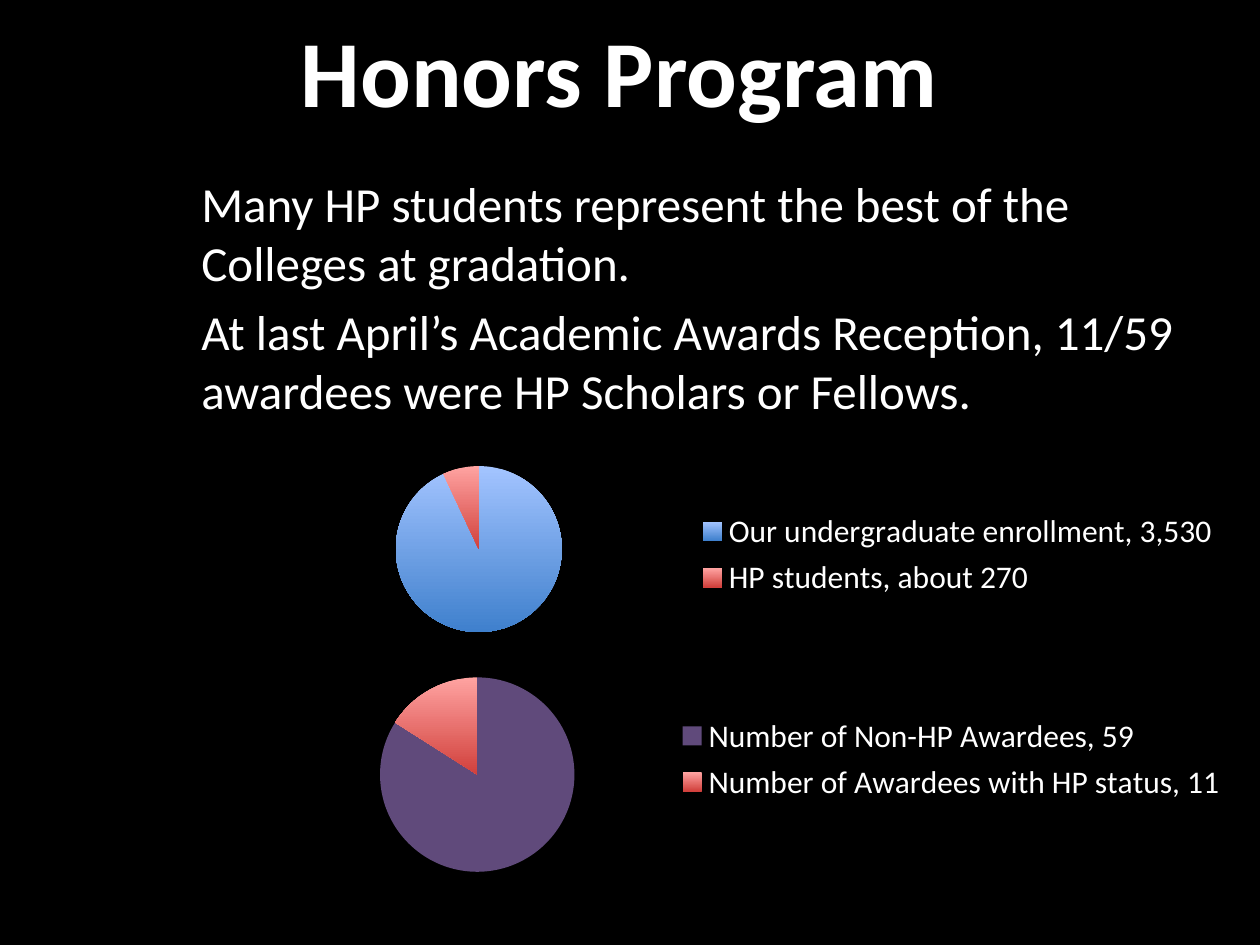
from lxml import etree
from pptx import Presentation
from pptx import util as u
from pptx.chart.data import CategoryChartData
from pptx.dml.color import RGBColor
from pptx.enum import chart as charts, text
from pptx.oxml import ns

COLORS = {
    "background": "000000",
    "text": "FFFFFF",
    "blue": ("A3C4FF", "3F80CD"),
    "red": ("FFA3A1", "D1403C"),
    "purple": "604A7B",
}
FONT = "Calibri"


def style_font(font, size, bold=False):
    font.name = FONT
    font.size = u.Pt(size)
    font.bold = bold
    font.color.rgb = RGBColor.from_string(COLORS["text"])


def set_layout(parent, index, mode, box):
    """Place a chart part by fractions of the chart: left, top, width, height."""
    for old_layout in parent.findall(ns.qn("c:layout")):
        parent.remove(old_layout)
    layout = etree.Element(ns.qn("c:layout"))
    manual = etree.SubElement(layout, ns.qn("c:manualLayout"))
    settings = [("xMode", "edge"), ("yMode", "edge"), *zip("xywh", box)]
    if mode:
        settings.insert(0, ("layoutTarget", mode))
    for tag, value in settings:
        etree.SubElement(manual, ns.qn("c:" + tag)).set("val", str(value))
    parent.insert(index, layout)


presentation = Presentation()
presentation.slide_width = u.Inches(10)
presentation.slide_height = u.Inches(7.5)
slide = presentation.slides.add_slide(presentation.slide_layouts[6])
slide.background.fill.solid()
slide.background.fill.fore_color.rgb = RGBColor.from_string(COLORS["background"])

# Pie charts: position, slices (label, percent, colour), plot and legend layout
pies = [
    ((0, 1.83, 10, 4.25),
     [("Our undergraduate enrollment, 3,530", 93, "blue"),
      ("HP students, about 270", 7, "red")],
     (0.26, 0.44, 0.24, 0.31), (0.53, 0.51, 0.46, 0.19)),
    ((1.25, 2.75, 8.75, 4.17),
     [("Number of Non-HP Awardees, 59", 84, "purple"),
      ("Number of Awardees with HP status, 11", 16, "red")],
     (0.15, 0.63, 0.28, 0.37), (0.46, 0.69, 0.52, 0.19)),
]
for position, slices, plot_box, legend_box in pies:
    data = CategoryChartData()
    data.categories = [label for label, percent, color in slices]
    data.add_series("Series 1", [percent for label, percent, color in slices])
    chart = slide.shapes.add_chart(
        charts.XL_CHART_TYPE.PIE, *map(u.Inches, position), data).chart
    style_font(chart.font, 18)
    chart.has_title = False
    chart.has_legend = True
    chart.legend.position = charts.XL_LEGEND_POSITION.RIGHT
    chart.legend.include_in_layout = False
    plot = chart.plots[0]
    plot.vary_by_categories = True
    for index, (label, percent, color) in enumerate(slices):
        point_format = plot.series[0].points[index].format
        point_format.line.fill.background()
        fill = point_format.fill
        if isinstance(COLORS[color], str):
            fill.solid()
            fill.fore_color.rgb = RGBColor.from_string(COLORS[color])
        else:
            fill.gradient()
            fill.gradient_angle = 270
            for stop, shade in zip(fill.gradient_stops, COLORS[color]):
                stop.color.rgb = RGBColor.from_string(shade)
    plot_area = chart.element.find(".//" + ns.qn("c:plotArea"))
    legend = chart.element.find(".//" + ns.qn("c:legend"))
    set_layout(plot_area, 0, "inner", plot_box)
    set_layout(legend, 1, None, legend_box)

# Text boxes: position, anchor, alignment, size, bold, space before, paragraphs
text_boxes = [
    ((0.75, -0.25, 8.5, 1.61), text.MSO_ANCHOR.MIDDLE, text.PP_ALIGN.CENTER,
     54, True, 0, ["Honors Program "]),
    ((1.5, 1.33, 8.08, 3), text.MSO_ANCHOR.TOP, text.PP_ALIGN.LEFT,
     28, False, 5.6,
     ["Many HP students represent the best of the Colleges at gradation.",
      "At last April’s Academic Awards Reception, 11/59 awardees were "
      "HP Scholars or Fellows."]),
]
for position, anchor, alignment, size, bold, space_before, wording in text_boxes:
    frame = slide.shapes.add_textbox(*map(u.Inches, position)).text_frame
    frame.word_wrap = True
    frame.vertical_anchor = anchor
    for index, words in enumerate(wording):
        paragraph = frame.add_paragraph() if index else frame.paragraphs[0]
        paragraph.alignment = alignment
        paragraph.space_before = u.Pt(space_before)
        run = paragraph.add_run()
        run.text = words
        style_font(run.font, size, bold)

presentation.save("out.pptx")
